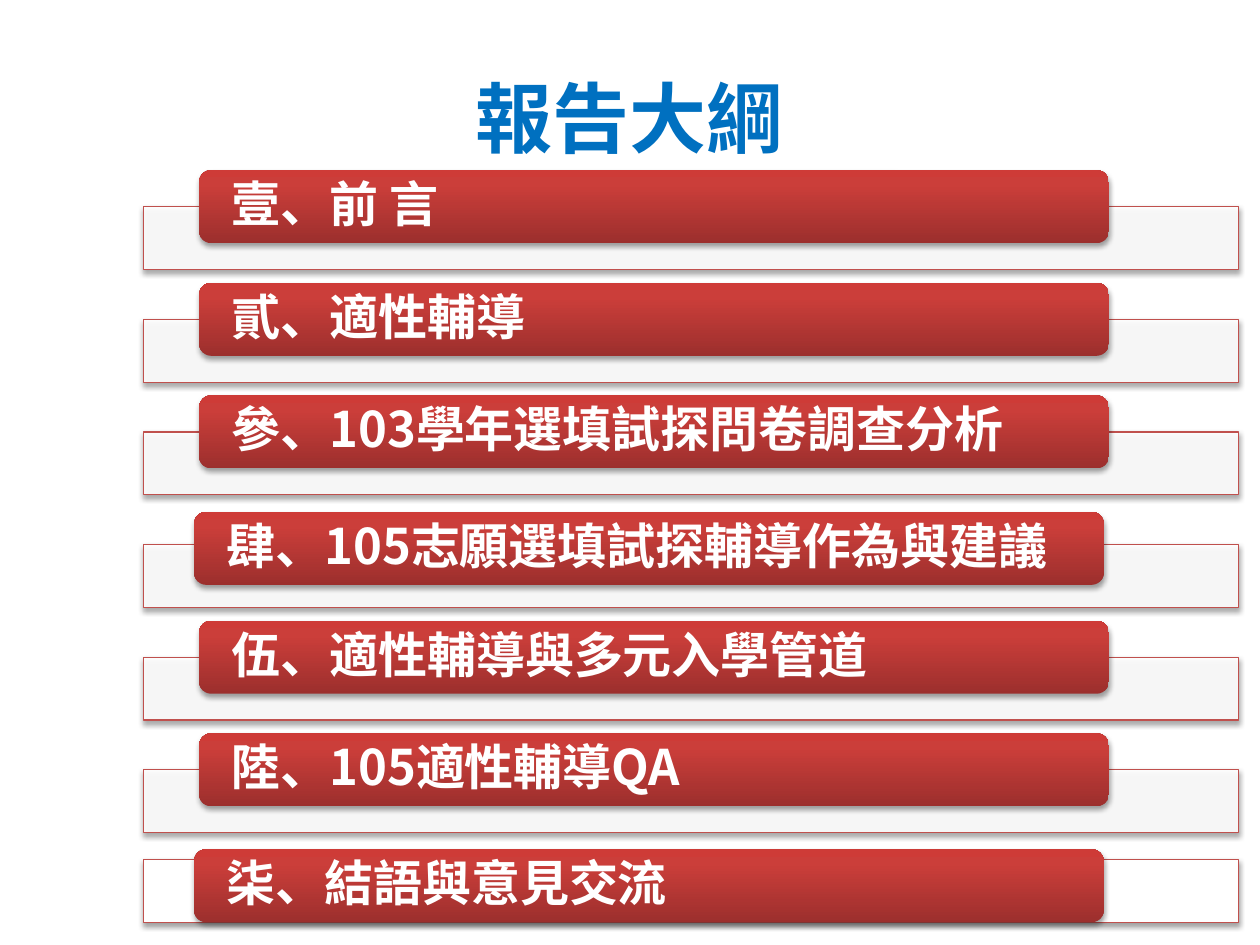
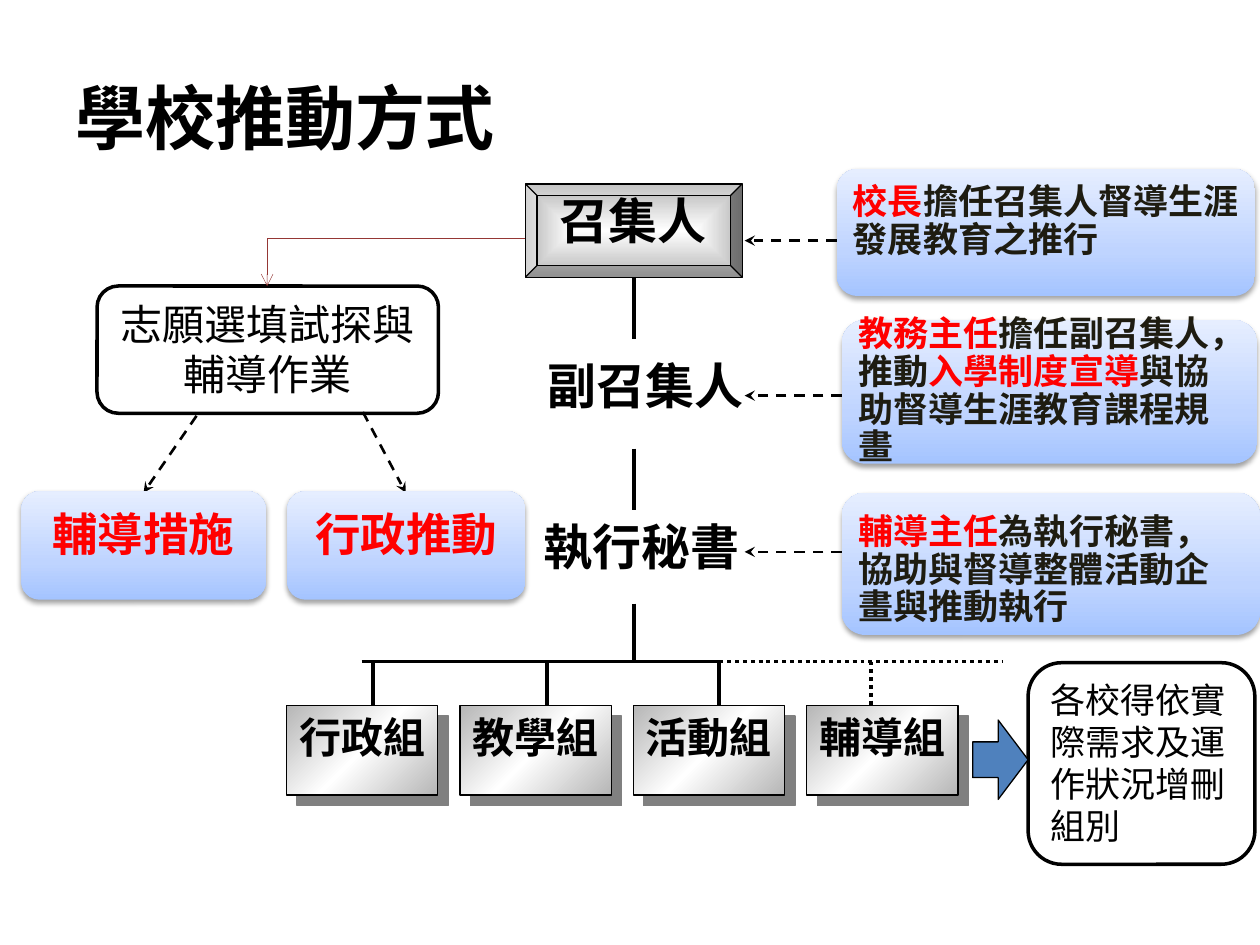
from lxml.etree import SubElement
from pptx import Presentation
from pptx.dml.color import RGBColor
from pptx.enum.dml import MSO_LINE
from pptx.enum.shapes import MSO_CONNECTOR, MSO_SHAPE
from pptx.enum.text import MSO_ANCHOR, PP_ALIGN
from pptx.oxml import parse_xml
from pptx.oxml.ns import nsdecls, qn
from pptx.util import Inches, Pt

# Grid: 100 columns by 75 rows of square cells
COLS, ROWS = 100, 75
CELL = Inches(0.1)
FONT = "Noto Sans CJK SC"
COLORS = {
    "white": "FFFFFF", "black": "000000", "title": "0070C0", "ink": "1E1C11",
    "red": "FF0000", "frame": "C0504D", "branch": "953735", "arrow": "4F81BD",
    "gray": "808080",
}
BAR_FILL = dict(stops=[(0, "9C2F2D"), (80, "CB3E3A"), (100, "CE3B37")], angle=270)
CARD_FILL = dict(stops=[(0, "A4C4FF"), (35, "BFD4FF"), (100, "E6EEFF")], angle=270)
METAL_FILL = dict(stops=[(0, "B6B6B6"), (50, "FFFFFF"), (100, "B6B6B6")], angle=45)
BEVEL_FILL = dict(stops=[(0, "FFFFFF"), (100, "B6B6B6")])
SOFT_SHADOW = dict(color="black", alpha=36, blur=3.1, dist=1.7, angle=90)
HARD_SHADOW = dict(color="gray", alpha=100, blur=0, dist=8.5, angle=45)


def rgb(name):
    return RGBColor.from_string(COLORS[name])


def cells(*values):
    return [round(v * CELL) for v in values]


def write(s, text, size=20, color="black", bold=False, align=PP_ALIGN.LEFT,
          anchor=MSO_ANCHOR.TOP, inset=(1, 0.5, 1, 0.5), spacing=None):
    """Fill a shape with text: a string, or a list of (string, colour) runs."""
    tf = s.text_frame
    tf.word_wrap = True
    tf.vertical_anchor = anchor
    tf.margin_left, tf.margin_top, tf.margin_right, tf.margin_bottom = cells(*inset)
    p = tf.paragraphs[0]
    p.alignment = align
    if spacing:
        p.line_spacing = spacing
    for part, part_color in [(text, color)] if isinstance(text, str) else text:
        r = p.add_run()
        r.text = part
        r.font.size = Pt(size)
        r.font.bold = bold
        r.font.name = FONT
        r.font.color.rgb = rgb(part_color)
        SubElement(r.font._element, qn("a:ea"), typeface=FONT)


def label(slide, box, text, **fmt):
    write(slide.shapes.add_textbox(*cells(*box)), text, **fmt)


def title(slide, text, **fmt):
    label(slide, (5, 3, COLS - 10, 12.5), text, bold=True,
          anchor=MSO_ANCHOR.MIDDLE, **fmt)


def set_gradient(s, stops, angle=None):
    """Linear gradient, or one that spreads from the centre without an angle."""
    s.fill.solid()
    marks = "".join(f'<a:gs pos="{pos * 1000}"><a:srgbClr val="{c}"/></a:gs>'
                    for pos, c in stops)
    if angle is None:
        spread = ('<a:path path="rect"><a:fillToRect l="50000" t="50000" '
                  'r="50000" b="50000"/></a:path>')
    else:
        spread = f'<a:lin ang="{angle * 60000}" scaled="0"/>'
    grad = parse_xml(f'<a:gradFill {nsdecls("a")} rotWithShape="1">'
                     f'<a:gsLst>{marks}</a:gsLst>{spread}</a:gradFill>')
    spPr = s._element.spPr
    spPr.replace(spPr.find(qn("a:solidFill")), grad)


def set_shadow(s, color, alpha, blur, dist, angle):
    effects = s._element.spPr.find(qn("a:effectLst"))
    effects.append(parse_xml(
        f'<a:outerShdw {nsdecls("a")} blurRad="{Pt(blur)}" dist="{Pt(dist)}" '
        f'dir="{angle * 60000}" algn="ctr" rotWithShape="0">'
        f'<a:srgbClr val="{COLORS[color]}"><a:alpha val="{alpha * 1000}"/>'
        '</a:srgbClr></a:outerShdw>'))


def shape(slide, kind, box, fill="white", line=None, width=0.75, alpha=None,
          shadow=None):
    s = slide.shapes.add_shape(kind, *cells(*box))
    s.shadow.inherit = False
    if isinstance(fill, dict):
        set_gradient(s, **fill)
    else:
        s.fill.solid()
        s.fill.fore_color.rgb = rgb(fill)
    if alpha:
        clr = s._element.spPr.find(qn("a:solidFill"))[0]
        SubElement(clr, qn("a:alpha"), val=str(alpha * 1000))
    if line:
        s.line.color.rgb = rgb(line)
        s.line.width = Pt(width)
    else:
        s.line.fill.background()
    if shadow:
        set_shadow(s, **shadow)
    return s


def connector(slide, start, end, color="black", width=2.25, dash=None, tail=None,
              kind=MSO_CONNECTOR.STRAIGHT):
    c = slide.shapes.add_connector(kind, *cells(*start, *end))
    c.line.color.rgb = rgb(color)
    c.line.width = Pt(width)
    if dash:
        c.line.dash_style = dash
    if tail:
        SubElement(c.line._get_or_add_ln(), qn("a:tailEnd"), type=tail)
    SubElement(c._element.spPr, qn("a:effectLst"))
    return c


def dashed_arrow(slide, start, end):
    connector(slide, start, end, width=1.5, dash=MSO_LINE.DASH, tail="stealth")


def corner_arrow(slide, start, end):
    """Arrow that runs left from start, then down to end."""
    c = connector(slide, start, end, color="branch", width=0.25, tail="arrow",
                  kind=MSO_CONNECTOR.ELBOW)
    spPr = c._element.spPr
    spPr.find(qn("a:prstGeom")).set("prst", "bentConnector2")
    xfrm = spPr.find(qn("a:xfrm"))
    xfrm.attrib.pop("flipH", None)
    xfrm.set("rot", "10800000")
    xfrm.set("flipV", "1")


def card(slide, box, text, lift=0, **fmt):
    """Blue rounded card; a positive lift moves its text up from the middle."""
    s = shape(slide, MSO_SHAPE.ROUNDED_RECTANGLE, box, CARD_FILL, shadow=SOFT_SHADOW)
    inset = (0.8, max(-lift, 0) * 2, 0.8, max(lift, 0) * 2)
    write(s, text, bold=True, anchor=MSO_ANCHOR.MIDDLE, spacing=0.9,
          inset=inset, **fmt)


def note(slide, box, text, **fmt):
    s = shape(slide, MSO_SHAPE.ROUNDED_RECTANGLE, box, line="black", width=2)
    write(s, text, **fmt)


def outline_row(slide, frame_top, bar_left, bar_top, text, alpha=90):
    shape(slide, MSO_SHAPE.RECTANGLE, (11.4, frame_top, 86.9, 5), line="frame",
          alpha=alpha, shadow=SOFT_SHADOW)
    bar = shape(slide, MSO_SHAPE.ROUNDED_RECTANGLE, (bar_left, bar_top, 72.2, 5.8),
                BAR_FILL, shadow=SOFT_SHADOW)
    write(bar, text, size=28, color="white", bold=True, anchor=MSO_ANCHOR.MIDDLE,
          inset=(2.3, 0, 2.2, 0), spacing=0.9)


def outline_slide(slide):
    title(slide, "報告大綱", size=44, color="title", align=PP_ALIGN.CENTER)
    topics = ["壹、前 言", "貳、適性輔導", "參、103學年選填試探問卷調查分析",
              "肆、105志願選填試探輔導作為與建議", "伍、適性輔導與多元入學管道",
              "陸、105適性輔導QA"]
    for i, topic in enumerate(topics):
        top = 16.4 + i * 8.94
        left, rise = (15.4, 2.6) if topic.startswith("肆") else (15.8, 2.9)
        outline_row(slide, top, left, top - rise, topic)
    outline_row(slide, 68.2, 15.4, 67.4, "柒、結語與意見交流", alpha=None)


def branch_of_trial(slide):
    center = PP_ALIGN.CENTER
    note(slide, (7.7, 22.7, 27.1, 10.1), "志願選填試探與輔導作業", size=24, align=center)
    dashed_arrow(slide, (28.8, 32.7), (32.2, 39.1))
    dashed_arrow(slide, (15.6, 33), (11.4, 39.1))
    corner_arrow(slide, (41.7, 18.9), (21.2, 22.7))
    for left, width, text in [(1.7, 19.4, "輔導措施"), (22.8, 18.9, "行政推動")]:
        card(slide, (left, 39, width, 8.6), text, lift=0.7, size=26, color="red",
             align=center)


def chain_of_roles(slide):
    axis = 50.3
    head = shape(slide, MSO_SHAPE.BEVEL, (41.7, 14.6, 17.2, 7.4), BEVEL_FILL,
                 line="black")
    for left, top, role in [(40.75, 14.6, "召集人"), (41.7, 27.7, "副召集人"),
                            (41.4, 40.5, "執行秘書")]:
        label(slide, (left, top, 19, 7.4), role, size=28, bold=True,
              align=PP_ALIGN.CENTER)
    stems = [connector(slide, (axis, top), (axis, bottom))
             for top, bottom in [(22, 26.9), (35.6, 40.5), (47.9, 52.5)]]
    stems[0].begin_connect(head, 2)


def duty_cards(slide):
    duties = [
        ((66.4, 13.4, 33.2, 10.1), 19.1, 0.8,
         [("校長", "red"), ("擔任召集人督導生涯發展教育之推行", "ink")]),
        ((66.8, 25.4, 33, 11.4), 31.4, 0,
         [("教務主任", "red"), ("擔任副召集人，推動", "ink"),
          ("入學制度宣導", "red"), ("與協助督導生涯教育課程規畫", "ink")]),
        ((66.8, 39.1, 33.2, 11.3), 43.8, -0.55,
         [("輔導主任", "red"),
          ("為執行秘書，協助與督導整體活動企畫與推動執行", "ink")]),
    ]
    for box, arrow_row, lift, text in duties:
        dashed_arrow(slide, (box[0], arrow_row), (59.1, arrow_row))
        card(slide, box, text, lift=lift)


def working_groups(slide):
    rail, top = 52.5, 56
    dots = MSO_LINE.ROUND_DOT
    connector(slide, (28.7, rail), (57.1, rail))
    connector(slide, (57.1, rail), (79.5, rail), dash=dots)
    for col, dash in [(29.6, None), (43.4, None), (57.1, None), (69.1, dots)]:
        connector(slide, (col, rail), (col, rail + 4.9), dash=dash)
    for i, name in enumerate(["行政組", "教學組", "活動組", "輔導組"]):
        s = shape(slide, MSO_SHAPE.RECTANGLE, (22.75 + i * 13.76, top, 12, 7.1),
                  METAL_FILL, line="black", shadow=HARD_SHADOW)
        write(s, name, size=24, bold=True, align=PP_ALIGN.CENTER,
              inset=(0, 0.5, 0, 0))
    note(slide, (81.6, 52.6, 18, 16), "各校得依實際需求及運作狀況增刪組別")
    arrow = shape(slide, MSO_SHAPE.RIGHT_ARROW, (77.2, 57.15, 4.4, 6.3), "arrow",
                  line="black")
    arrow.adjustments[0], arrow.adjustments[1] = 0.45, 0.54


def promotion_slide(slide):
    title(slide, "學校推動方式", size=40)
    branch_of_trial(slide)
    chain_of_roles(slide)
    duty_cards(slide)
    working_groups(slide)


def main():
    prs = Presentation()
    prs.slide_width, prs.slide_height = cells(COLS, ROWS)
    for build in (outline_slide, promotion_slide):
        build(prs.slides.add_slide(prs.slide_layouts[6]))
    prs.save("out.pptx")


if __name__ == "__main__":
    main()
